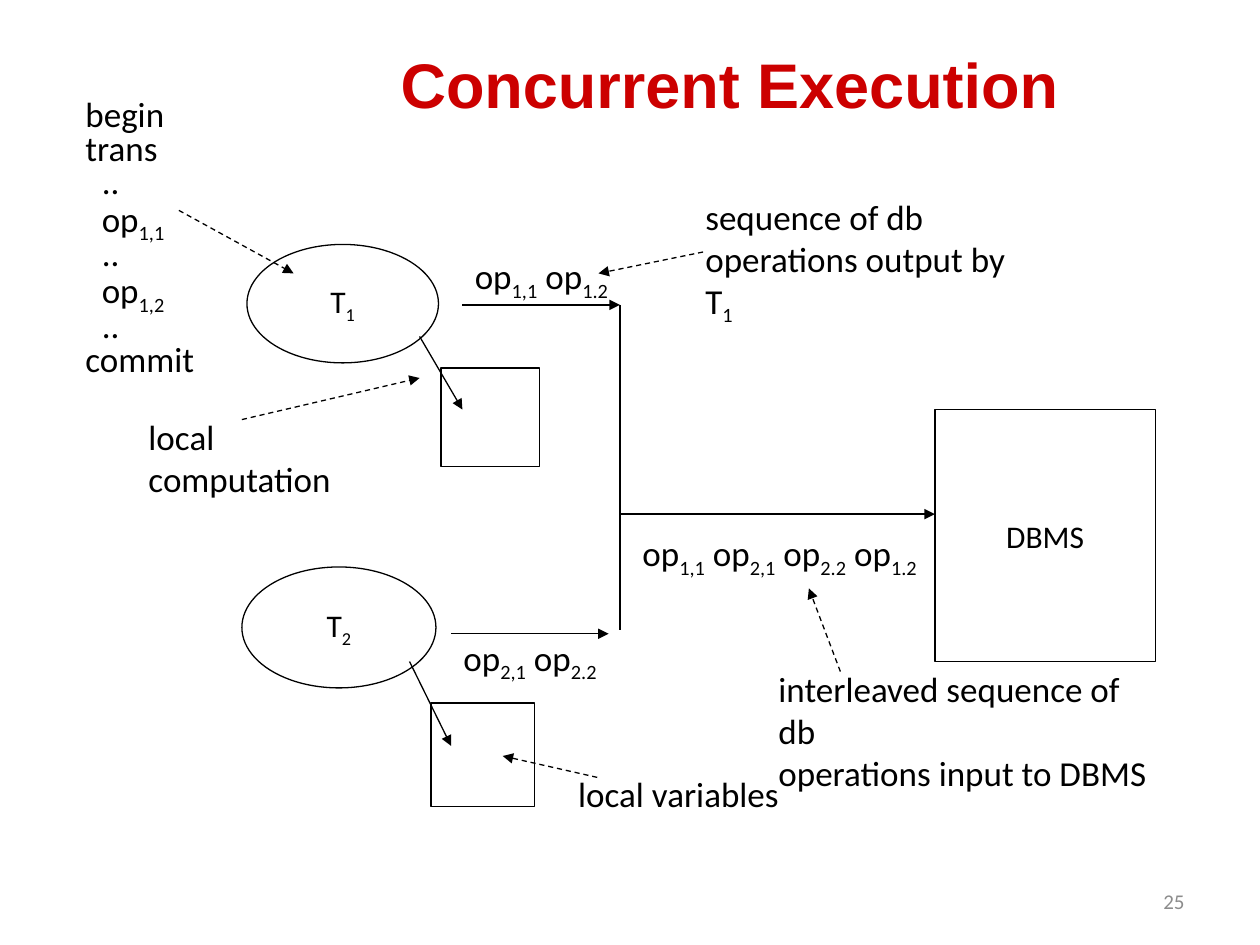
from lxml import etree
from pptx import Presentation
from pptx.dml.color import RGBColor
from pptx.enum.dml import MSO_LINE
from pptx.enum.shapes import MSO_CONNECTOR, MSO_SHAPE
from pptx.enum.text import MSO_ANCHOR, PP_ALIGN
from pptx.oxml.ns import qn
from pptx.util import Inches, Pt

OVAL, RECTANGLE = MSO_SHAPE.OVAL, MSO_SHAPE.RECTANGLE
STRAIGHT, DASH = MSO_CONNECTOR.STRAIGHT, MSO_LINE.DASH
LEFT, CENTER, RIGHT = PP_ALIGN.LEFT, PP_ALIGN.CENTER, PP_ALIGN.RIGHT
TOP, MIDDLE = MSO_ANCHOR.TOP, MSO_ANCHOR.MIDDLE
COLORS = {"title": "CC0000", "ink": "000000", "paper": "FFFFFF", "number": "8C8C8C"}
LINE_WIDTH = Pt(0.75)


def rgb(name):
    return RGBColor.from_string(COLORS[name])


def write_paragraph(paragraph, text, size, color="ink", font="Calibri", bold=False, align=LEFT):
    """Write text in which each part between underscores is a subscript."""
    paragraph.alignment = align
    for index, part in enumerate(text.split("_")):
        if not part:
            continue
        run = paragraph.add_run()
        run.text = part
        run.font.size = Pt(size)
        run.font.name = font
        run.font.bold = bold
        run.font.color.rgb = rgb(color)
        if index % 2:
            run._r.get_or_add_rPr().set("baseline", "-25000")


def add_text(slide, box, lines, size=20, anchor=TOP, **style):
    frame = slide.shapes.add_textbox(*map(Inches, box)).text_frame
    frame.word_wrap = True
    frame.vertical_anchor = anchor
    for index, line in enumerate(lines):
        paragraph = frame.add_paragraph() if index else frame.paragraphs[0]
        write_paragraph(paragraph, line, size, **style)
    return frame


def add_outline(slide, kind, box, label=None):
    shape = slide.shapes.add_shape(kind, *map(Inches, box))
    shape.shadow.inherit = False
    shape.fill.solid()
    shape.fill.fore_color.rgb = rgb("paper")
    shape.line.color.rgb = rgb("ink")
    shape.line.width = LINE_WIDTH
    if label:
        frame = shape.text_frame
        frame.word_wrap = False
        frame.vertical_anchor = MIDDLE
        write_paragraph(frame.paragraphs[0], label, 18, align=CENTER)


def add_line(slide, start, end, dashed=False, arrow=True):
    connector = slide.shapes.add_connector(STRAIGHT, *map(Inches, (*start, *end)))
    connector.line.color.rgb = rgb("ink")
    connector.line.width = LINE_WIDTH
    if dashed:
        connector.line.dash_style = DASH
    if arrow:
        etree.SubElement(connector.line._get_or_add_ln(), qn("a:tailEnd"), type="triangle")
    etree.SubElement(connector._element.spPr, qn("a:effectLst"))


def add_callout(slide, box, lines, start, end):
    """Place a note in its box, with a dashed arrow between offsets from its corner."""
    left, top, _, _ = box
    frame = add_text(slide, box, lines)
    add_line(slide, *((left + x, top + y) for x, y in (start, end)), dashed=True)
    return frame


def add_transaction(slide, box, name, variables, pointer, output, label_top, operations):
    """Place a transaction oval, its local variables and its output, offset from the box corner."""
    left, top, _, _ = box
    add_outline(slide, OVAL, box, name)
    x, y, side = variables
    add_outline(slide, RECTANGLE, (left + x, top + y, side, side))
    add_line(slide, *((left + x, top + y) for x, y in pointer))
    x, y = left + output[0], top + output[1]
    add_line(slide, (x, y), (x + 1.25, y))
    add_text(slide, (x, top + label_top, 1.3, 0.43), [operations])


def add_database(slide, box):
    """Place the DBMS with the merged stream that enters it from the left."""
    left, top, _, _ = box
    stream_left, stream_y = left - 2.5, top + 0.83
    add_outline(slide, RECTANGLE, box, "DBMS")
    add_line(slide, (stream_left, top - 0.83), (stream_left, top + 1.75), arrow=False)
    add_line(slide, (stream_left, stream_y), (left, stream_y))
    add_text(slide, (left - 2.42, top + 0.92, 2.43, 0.43),
             ["op_1,1_ op_2,1_ op_2.2_ op_1.2_"])


def add_program(slide, box):
    """List the transaction's program, with its body indented."""
    body = ["..", "op_1,1_", "..", "op_1,2_", ".."]
    frame = add_callout(slide, box, ["begin trans", *body, "commit"], (0.84, 0.92), (1.75, 1.42))
    for paragraph in frame.paragraphs:
        paragraph.line_spacing = 0.8
    for paragraph in frame.paragraphs[1:-1]:
        paragraph._p.get_or_add_pPr().set("marL", str(Inches(0.13)))


def add_notes_on_diagram(slide):
    callouts = [
        ((1.08, 3.25, 2.15, 0.77), ["local computation"], (0.84, 0.08), (2.25, -0.25)),
        ((4.49, 6.08, 1.82, 0.43), ["local variables"], (0.25, 0.09), (-0.5, -0.08)),
        ((5.5, 1.5, 2.8, 1.1), ["sequence of db", "operations output by T_1_"],
         (0.08, 0.5), (-0.75, 0.67)),
        ((6.08, 5.25, 3.17, 1.1), ["interleaved sequence of db", "operations input to DBMS"],
         (0.59, 0.08), (0.34, -0.58)),
    ]
    for callout in callouts:
        add_callout(slide, *callout)


def main():
    presentation = Presentation()
    presentation.slide_width, presentation.slide_height = Inches(10), Inches(7.5)
    slide = presentation.slides.add_slide(presentation.slide_layouts[6])
    add_text(slide, (2, 0.33, 7.58, 0.67), ["Concurrent Execution"], 36, MIDDLE,
             color="title", font="Arial", bold=True, align=CENTER)
    add_transaction(slide, (1.96, 1.94, 1.52, 0.94), "T_1_", (1.54, 0.98, 0.78),
                    ((1.37, 0.73), (1.71, 1.31)), (1.71, 0.48), 0.03, "op_1,1_ op_1.2_")
    add_transaction(slide, (1.92, 4.5, 1.54, 0.96), "T_2_", (1.5, 1.08, 0.82),
                    ((1.33, 0.75), (1.66, 1.42)), (1.66, 0.53), 0.5, "op_2,1_ op_2.2_")
    add_database(slide, (7.42, 3.25, 1.75, 2))
    add_notes_on_diagram(slide)
    add_program(slide, (0.58, 0.75, 1.43, 2.25))
    add_text(slide, (7.17, 6.95, 2.33, 0.4), ["25"], 12, MIDDLE, color="number", align=RIGHT)
    presentation.save("out.pptx")


if __name__ == "__main__":
    main()
